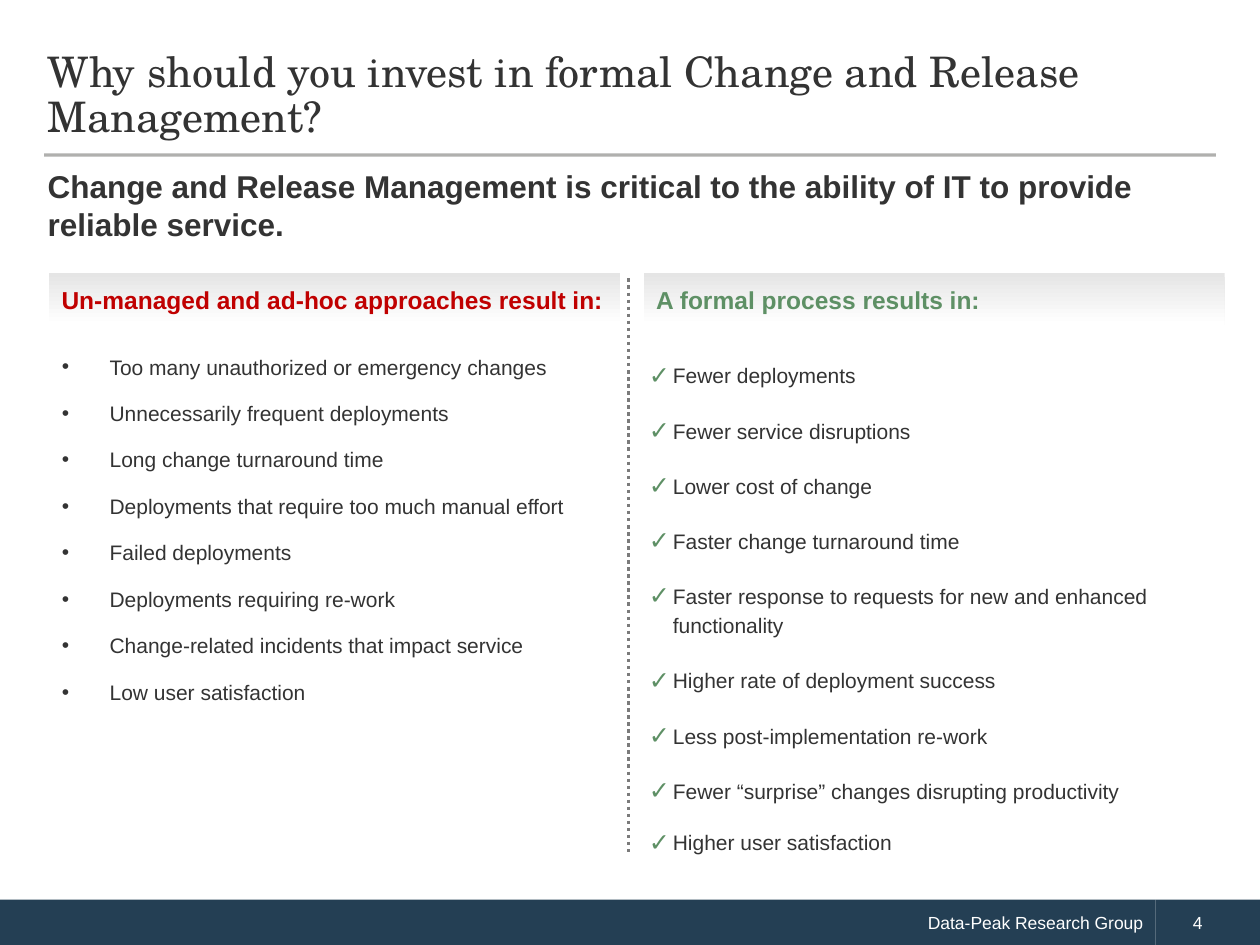
from lxml.etree import SubElement
from pptx import Presentation
from pptx.dml.color import RGBColor
from pptx.enum.dml import MSO_LINE
from pptx.enum.shapes import MSO_CONNECTOR, MSO_SHAPE
from pptx.enum.text import MSO_ANCHOR, MSO_AUTO_SIZE, PP_ALIGN
from pptx.oxml.ns import qn
from pptx.util import Inches, Pt

COLORS = {
    "text": "333333",
    "white": "FFFFFF",
    "navy": "243F54",
    "rule": "45433E",
    "divider": "7B7B7B",
    "header": "E5E5E5",
    "problem": "C00000",
    "benefit": "5E9065",
}
PROBLEMS = [
    "Too many unauthorized or emergency changes",
    "Unnecessarily frequent deployments",
    "Long change turnaround time",
    "Deployments that require too much manual effort",
    "Failed deployments",
    "Deployments requiring re-work",
    "Change-related incidents that impact service",
    "Low user satisfaction",
]
BENEFITS = [
    "Fewer deployments",
    "Fewer service disruptions",
    "Lower cost of change",
    "Faster change turnaround time",
    "Faster response to requests for new and enhanced functionality",
    "Higher rate of deployment success",
    "Less post-implementation re-work",
    "Fewer “surprise” changes disrupting productivity",
    "Higher user satisfaction",
]


def color(name):
    """Return the named colour."""
    return RGBColor.from_string(COLORS[name])


def place(shape, left, top, width, height):
    """Move and size a shape, in inches."""
    shape.left, shape.top = Inches(left), Inches(top)
    shape.width, shape.height = Inches(width), Inches(height)


def style(paragraph, size, ink="text", bold=False, face="Arial"):
    """Set the font of a whole paragraph."""
    font = paragraph.font
    font.name, font.size, font.bold = face, Pt(size), bold
    font.color.rgb = color(ink)


def write(shape, text, size, ink="text", bold=False, face="Arial", align=PP_ALIGN.LEFT):
    """Write one wrapped, vertically centred paragraph and return it."""
    frame = shape.text_frame
    frame.word_wrap = True
    frame.auto_size = MSO_AUTO_SIZE.NONE
    frame.vertical_anchor = MSO_ANCHOR.MIDDLE
    frame.text = text
    paragraph = frame.paragraphs[0]
    paragraph.alignment = align
    style(paragraph, size, ink, bold, face)
    return paragraph


def add_block(slide, left, top, width, height):
    """Add a rectangle without outline or shadow."""
    block = slide.shapes.add_shape(
        MSO_SHAPE.RECTANGLE, Inches(left), Inches(top), Inches(width), Inches(height))
    block.shadow.inherit = False
    block.line.fill.background()
    return block


def add_footer(slide, left, width, text, align, indent):
    """Add one part of the footer band."""
    band = add_block(slide, left, 7.14, width, 0.37)
    band.fill.solid()
    band.fill.fore_color.rgb = color("navy")
    paragraph = write(band, text, 10, "white", align=align)
    paragraph._p.get_or_add_pPr().set("marL", str(Inches(indent)))


def add_header(slide, left, width, text, ink):
    """Add a column header that fades to white."""
    header = add_block(slide, left, 2.17, width, 0.41)
    header.fill.gradient()
    header.fill.gradient_angle = 270
    for stop, shade in zip(header.fill.gradient_stops, ("header", "white")):
        stop.color.rgb = color(shade)
    write(header, text, 14, ink, bold=True)


def add_line(slide, start, end, ink, width):
    """Add a straight line without shadow."""
    line = slide.shapes.add_connector(
        MSO_CONNECTOR.STRAIGHT, *(Inches(value) for value in (*start, *end)))
    line.line.color.rgb = color(ink)
    line.line.width = Pt(width)
    SubElement(line._element.spPr, qn("a:effectLst"))
    return line


def set_bullet(paragraph, mark, hang, ink, percent):
    """Give a paragraph a hanging bullet."""
    props = paragraph._p.get_or_add_pPr()
    props.set("marL", str(Inches(hang)))
    props.set("indent", str(-Inches(hang)))
    SubElement(SubElement(props, qn("a:buClr")), qn("a:srgbClr"), val=COLORS[ink])
    SubElement(props, qn("a:buSzPct"), val=str(percent * 1000))
    SubElement(props, qn("a:buFont"), typeface="Arial")
    SubElement(props, qn("a:buChar"), char=mark)


def fill_list(holder, items, mark, hang, before, ink="text", percent=100):
    """Fill a body placeholder with a bulleted list."""
    frame = holder.text_frame
    frame.word_wrap = True
    frame.auto_size = MSO_AUTO_SIZE.NONE
    frame.text = "\n".join(items)
    for paragraph in frame.paragraphs:
        set_bullet(paragraph, mark, hang, ink, percent)
        paragraph.line_spacing = 1.15
        paragraph.space_before, paragraph.space_after = Pt(before), Pt(10)
        style(paragraph, 12)


def main():
    """Build the slide and save it."""
    deck = Presentation()
    deck.slide_width, deck.slide_height = Inches(10), Inches(7.5)
    slide = deck.slides.add_slide(deck.slide_layouts[3])
    title, problems, benefits = slide.placeholders

    add_footer(slide, 0, 9.17, "Data-Peak Research Group", PP_ALIGN.RIGHT, 0.29)
    add_footer(slide, 9.17, 0.83, "4", PP_ALIGN.LEFT, 0.2)
    rule = add_line(slide, (0.35, 1.23), (9.65, 1.23), "rule", 1.75)
    rule_color = rule.line._ln.find(".//" + qn("a:srgbClr"))
    SubElement(rule_color, qn("a:alpha"), val="42000")

    place(title, 0.28, 0.29, 9.42, 0.94)
    heading = write(title, "Why should you invest in formal Change and Release Management?",
                    24, face="TeX Gyre Schola")
    heading.line_spacing = Pt(26)
    message = slide.shapes.add_textbox(Inches(0.28), Inches(1.35), Inches(9.33), Inches(0.55))
    write(message, "Change and Release Management is critical to the ability of IT "
          "to provide reliable service.", 18, bold=True)

    add_header(slide, 0.39, 4.53, "Un-managed and ad-hoc approaches result in:", "problem")
    add_header(slide, 5.11, 4.61, "A formal process results in:", "benefit")
    divider = add_line(slide, (4.99, 2.21), (4.99, 6.76), "divider", 2)
    divider.line.dash_style = MSO_LINE.ROUND_DOT

    place(problems, 0.39, 2.73, 4.46, 2.94)
    fill_list(problems, PROBLEMS, "•", 0.38, 0)
    place(benefits, 5.01, 2.77, 4.6, 4.05)
    fill_list(benefits, BENEFITS, "✓", 0.19, 5, "benefit", 120)
    frame = benefits.text_frame
    frame.margin_left = frame.margin_right = Inches(0.14)
    frame.margin_top = frame.margin_bottom = Inches(0.08)
    closing = frame.paragraphs[-1]
    closing.line_spacing, closing.space_after = 1.0, Pt(0)

    deck.save("out.pptx")


if __name__ == "__main__":
    main()
